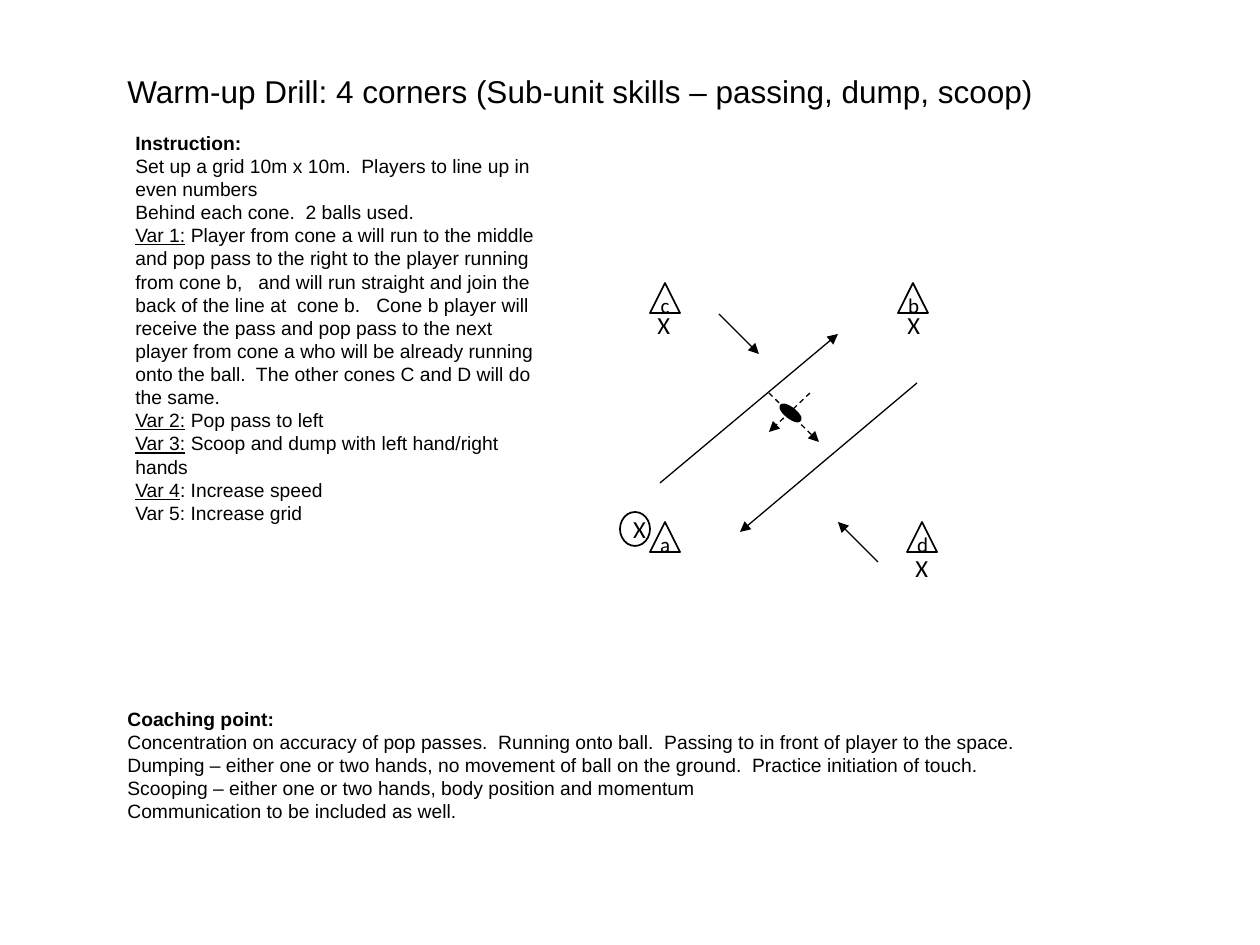
from lxml.etree import SubElement
from pptx import Presentation
from pptx.dml.color import RGBColor
from pptx.enum.dml import MSO_LINE
from pptx.enum.shapes import MSO_CONNECTOR, MSO_SHAPE as SHAPE
from pptx.enum.text import PP_ALIGN
from pptx.oxml.ns import qn
from pptx.util import Pt

PX = 914400 // 126
COLORS = {"ink": "000000"}
INK = RGBColor.from_string(COLORS["ink"])

TITLE = "Warm-up Drill: 4 corners (Sub-unit skills – passing, dump, scoop)"

# Each paragraph is a lead, a rest and the style of the lead.
INSTRUCTIONS = [
    ("Instruction:", "", "bold"),
    ("", "Set up a grid 10m x 10m.  Players to line up in even numbers", ""),
    ("", "Behind each cone.  2 balls used.", ""),
    ("Var 1:", " Player from cone a will run to the middle and pop pass to the "
     "right to the player running from cone b,   and will run straight and join "
     "the back of the line at  cone b.   Cone b player will receive the pass and "
     "pop pass to the next player from cone a who will be already running onto "
     "the ball.  The other cones C and D will do the same.", "underline"),
    ("Var 2:", " Pop pass to left", "underline"),
    ("Var 3:", " Scoop and dump with left hand/right hands", "underline"),
    ("Var 4", ": Increase speed", "underline"),
    ("", "Var 5: Increase grid", ""),
]
COACHING = [
    ("Coaching point:", "", "bold"),
    ("", "Concentration on accuracy of pop passes.  Running onto ball.  "
     "Passing to in front of player to the space.", ""),
    ("", "Dumping – either one or two hands, no movement of ball on the ground.  "
     "Practice initiation of touch.", ""),
    ("", "Scooping – either one or two hands, body position and momentum", ""),
    ("", "Communication to be included as well.", ""),
]

# left, top, width, height, paragraphs, font, size
TEXTS = [
    (115, 66, 940, 50, [("", TITLE, "")], "Arial", 18),
    (123, 125, 427, 456, INSTRUCTIONS, "Arial", 11),
    (115, 701, 919, 168, COACHING, "Arial", 11),
]
PLAYERS = [(645, 304), (903, 547), (895, 304)]
CONE = 30
CONES = {"b": (898, 283), "c": (650, 283), "d": (907, 522), "a": (650, 522)}

# start, arrow tip
RUNS = [
    ((660, 483), (838, 334)),
    ((917, 383), (740, 532)),
    ((719, 314), (759, 354)),
    ((878, 562), (838, 522)),
]
PASSES = [((769, 393), (819, 442)), ((810, 393), (769, 432))]


def px(*lengths):
    return [length * PX for length in lengths]


def set_font(para, name, size):
    para.font.name = name
    para.font.size = Pt(size)
    para.font.color.rgb = INK


def add_text(page, left, top, width, height, paragraphs, font, size):
    box = page.shapes.add_textbox(*px(left, top, width, height))
    frame = box.text_frame
    frame.word_wrap = True
    for index, (lead, rest, style) in enumerate(paragraphs):
        para = frame.add_paragraph() if index else frame.paragraphs[0]
        set_font(para, font, size)
        if lead:
            span = para.add_run()
            span.text = lead
            span.font.bold = style == "bold"
            span.font.underline = style == "underline"
        if rest:
            para.add_run().text = rest


def add_mark(page, kind, left, top, width, height, label="", size=12):
    """Add an outlined shape with an optional centred letter."""
    mark = page.shapes.add_shape(kind, *px(left, top, width, height))
    mark.shadow.inherit = False
    mark.fill.background()
    mark.line.color.rgb = INK
    mark.line.width = Pt(1)
    if label:
        para = mark.text_frame.paragraphs[0]
        para.text = label
        para.alignment = PP_ALIGN.CENTER
        set_font(para, "Calibri", size)
    return mark


def add_arrow(page, start, tip, dashed=False):
    arrow = page.shapes.add_connector(MSO_CONNECTOR.STRAIGHT, *px(*start, *tip))
    arrow.line.color.rgb = INK
    arrow.line.width = Pt(0.75)
    if dashed:
        arrow.line.dash_style = MSO_LINE.DASH
    SubElement(arrow.line._get_or_add_ln(), qn("a:tailEnd"), type="triangle")
    SubElement(arrow._element.spPr, qn("a:effectLst"))


def main():
    deck = Presentation()
    deck.slide_width, deck.slide_height = px(1260, 945)
    page = deck.slides.add_slide(deck.slide_layouts[6])

    for text in TEXTS:
        add_text(page, *text)
    for label, (left, top) in CONES.items():
        add_mark(page, SHAPE.ISOSCELES_TRIANGLE, left, top, CONE, CONE, label)
    add_mark(page, SHAPE.OVAL, 620, 512, 30, 34, "X", 14)
    for left, top in PLAYERS:
        add_text(page, left, top, 44, 43, [("", "X", "")], "Calibri", 14)

    for start, tip in RUNS:
        add_arrow(page, start, tip)
    for start, tip in PASSES:
        add_arrow(page, start, tip, dashed=True)
    ball = add_mark(page, SHAPE.OVAL, 779, 409, 23, 8)
    ball.rotation = 38
    ball.fill.solid()
    ball.fill.fore_color.rgb = INK
    ball.line.width = Pt(2)

    deck.save("out.pptx")


if __name__ == "__main__":
    main()
